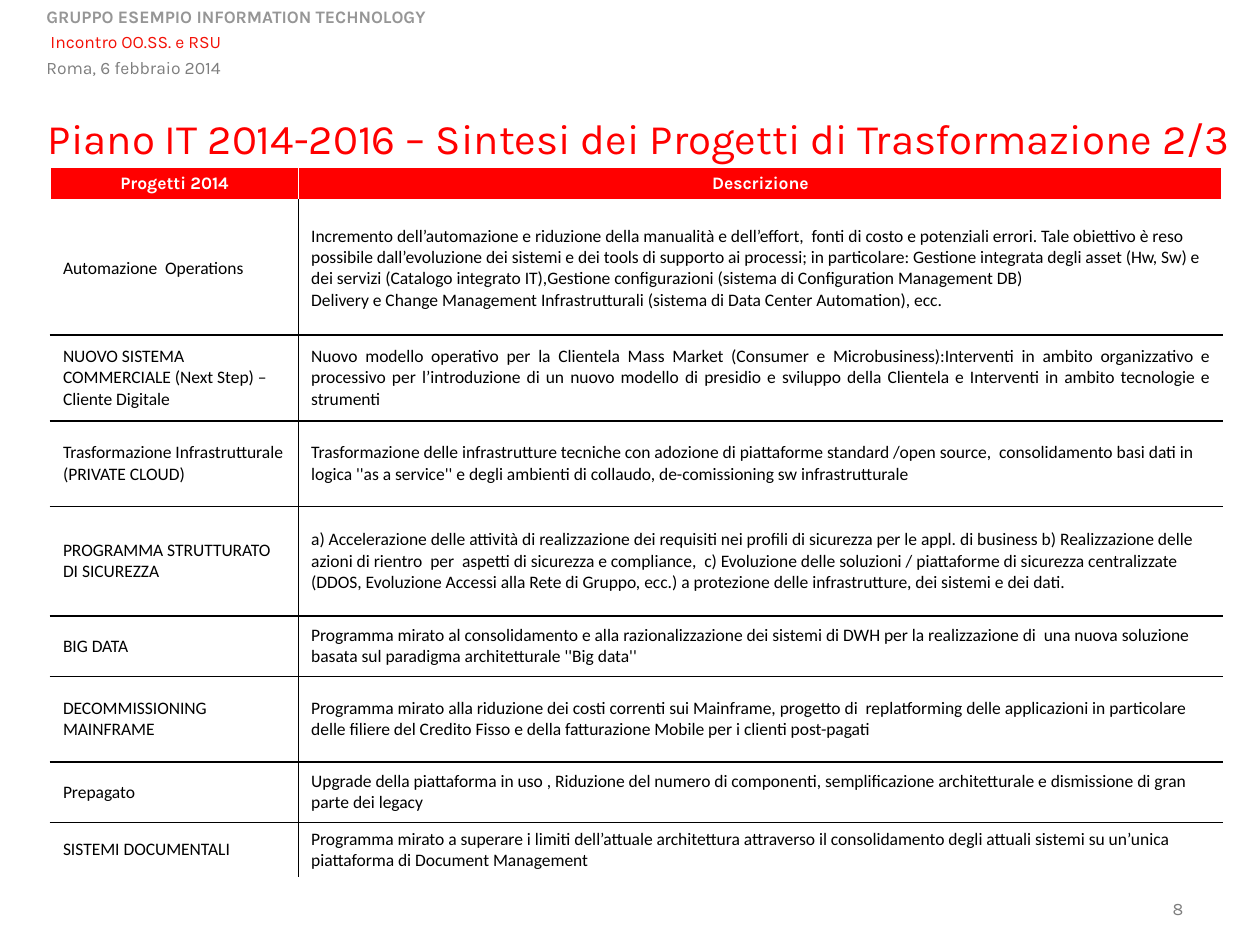
from pptx import Presentation, util as u
from pptx.dml.color import RGBColor
from pptx.enum import text
from pptx.oxml import parse_xml
from pptx.oxml.ns import nsdecls

RED, GREY, WHITE, BLACK = "FF0000", "7E7E7E", "FFFFFF", "000000"
ALIGN, ANCHOR = text.PP_ALIGN, text.MSO_ANCHOR


def color(code):
    return RGBColor.from_string(code)


class Deck:
    """Holds the style and the current slide."""
    head, body, size = "Karla", "Calibri", 10

    def __init__(self):
        self.prs = Presentation()
        self.prs.slide_width, self.prs.slide_height = u.Inches(10), u.Inches(7.5)
        self.slide = self.prs.slides.add_slide(self.prs.slide_layouts[5])

    def run(self, para, words, code, font=None, size=None, bold=False):
        run = para.add_run()
        run.text = words
        run.font.name = font or self.head
        run.font.size = u.Pt(size or self.size)
        run.font.bold = bold
        run.font.color.rgb = color(code)

    def title(self, words, *place):
        shape = self.slide.shapes.title
        shape.left, shape.top, shape.width, shape.height = map(u.Inches, place)
        frame = shape.text_frame
        frame.auto_size = text.MSO_AUTO_SIZE.NONE
        frame.vertical_anchor = ANCHOR.TOP
        para = frame.paragraphs[0]
        para.alignment, para.line_spacing = ALIGN.LEFT, 0.8
        self.run(para, words, RED, size=24)

    def box(self, *place, anchor=ANCHOR.TOP):
        frame = self.slide.shapes.add_textbox(*map(u.Inches, place)).text_frame
        frame.word_wrap = True
        frame.vertical_anchor = anchor
        return frame

    def edges(self, cell, **lines):
        for side, (code, width) in lines.items():
            cell._tc.get_or_add_tcPr().append(parse_xml(
                f'<a:ln{side} {nsdecls("a")} w="{u.Pt(width)}"><a:solidFill>'
                f'<a:srgbClr val="{code}"/></a:solidFill></a:ln{side}>'))

    def cell(self, cell, words, fill, code, font, align, bold=False):
        cell.fill.solid()
        cell.fill.fore_color.rgb = color(fill)
        frame = cell.text_frame
        for i, line in enumerate(words.split("\n")):
            para = frame.add_paragraph() if i else frame.paragraphs[0]
            para.alignment = align
            self.run(para, line, code, font, bold=bold)

    def table(self, left, top, cols, heads, rows):
        """Each row is height, project, description and its alignment."""
        tall = [0.27] + [row[0] for row in rows]
        grid = self.slide.shapes.add_table(
            len(tall), len(cols), *map(u.Inches, (left, top, sum(cols), sum(tall)))).table
        grid.horz_banding = False
        for col, width in zip(grid.columns, cols):
            col.width = u.Inches(width)
        for line, height in zip(grid.rows, tall):
            line.height = u.Inches(height)

        # Header row
        pale, dark = (WHITE, 1), (BLACK, 1)
        for c, words in enumerate(heads):
            cell = grid.cell(0, c)
            self.edges(cell, L=pale, R=pale, T=pale, B=(WHITE, 3))
            self.cell(cell, words, RED, WHITE, self.head, ALIGN.CENTER, True)

        # Body rows: dark lines only between cells
        for r, (_, name, about, align) in enumerate(rows, 1):
            over = pale if r == 1 else dark
            under = pale if r == len(rows) else dark
            for c, (words, side) in enumerate([(name, ALIGN.LEFT), (about, align)]):
                cell = grid.cell(r, c)
                cell.vertical_anchor = ANCHOR.MIDDLE
                self.edges(cell, L=dark if c else pale, R=pale if c else dark,
                           T=over, B=under)
                self.cell(cell, words, WHITE, BLACK, self.body, side)


ROWS = [
    (1.06, "Automazione  Operations",
     "Incremento dell’automazione e riduzione della manualità e dell’effort,  fonti di costo e "
     "potenziali errori. Tale obiettivo è reso possibile dall’evoluzione dei sistemi e dei tools di "
     "supporto ai processi; in particolare: Gestione integrata degli asset (Hw, Sw) e dei servizi "
     "(Catalogo integrato IT),Gestione configurazioni (sistema di Configuration Management DB)\n"
     "Delivery e Change Management Infrastrutturali (sistema di Data Center Automation), ecc.",
     ALIGN.LEFT),
    (0.68, "NUOVO SISTEMA COMMERCIALE (Next Step) – Cliente Digitale",
     "Nuovo modello operativo per la Clientela Mass Market (Consumer e Microbusiness):Interventi in "
     "ambito organizzativo e processivo per l’introduzione di un nuovo modello di presidio e sviluppo "
     "della Clientela e Interventi in ambito tecnologie e strumenti", ALIGN.JUSTIFY),
    (0.68, "Trasformazione Infrastrutturale (PRIVATE CLOUD)",
     "Trasformazione delle infrastrutture tecniche con adozione di piattaforme standard /open source,  "
     "consolidamento basi dati in logica ''as a service'' e degli ambienti di collaudo, "
     "de-comissioning sw infrastrutturale", ALIGN.LEFT),
    (0.87, "PROGRAMMA STRUTTURATO DI SICUREZZA",
     "a) Accelerazione delle attività di realizzazione dei requisiti nei profili di sicurezza per le "
     "appl. di business b) Realizzazione delle azioni di rientro  per  aspetti di sicurezza e "
     "compliance,  c) Evoluzione delle soluzioni / piattaforme di sicurezza centralizzate (DDOS, "
     "Evoluzione Accessi alla Rete di Gruppo, ecc.) a protezione delle infrastrutture, dei sistemi e "
     "dei dati.", ALIGN.LEFT),
    (0.48, "BIG DATA",
     "Programma mirato al consolidamento e alla razionalizzazione dei sistemi di DWH per la "
     "realizzazione di  una nuova soluzione basata sul paradigma architetturale ''Big data''",
     ALIGN.LEFT),
    (0.68, "DECOMMISSIONING MAINFRAME",
     "Programma mirato alla riduzione dei costi correnti sui Mainframe, progetto di  replatforming "
     "delle applicazioni in particolare delle filiere del Credito Fisso e della fatturazione Mobile "
     "per i clienti post-pagati", ALIGN.LEFT),
    (0.48, "Prepagato",
     "Upgrade della piattaforma in uso , Riduzione del numero di componenti, semplificazione "
     "architetturale e dismissione di gran parte dei legacy", ALIGN.LEFT),
    (0.43, "SISTEMI DOCUMENTALI",
     "Programma mirato a superare i limiti dell’attuale architettura attraverso il consolidamento "
     "degli attuali sistemi su un’unica piattaforma di Document Management", ALIGN.LEFT),
]


def main():
    deck = Deck()

    # Meeting details
    frame = deck.box(0.27, 0, 5, 0.67)
    deck.run(frame.paragraphs[0], "GRUPPO ESEMPIO INFORMATION TECHNOLOGY", "969696", bold=True)
    para = frame.add_paragraph()
    para.line_spacing = 1.2
    deck.run(para, " Incontro OO.SS. e RSU", "F31107")
    para.add_line_break()
    deck.run(para, "Roma, 6 febbraio 2014", GREY)

    # Title
    deck.title("Piano IT 2014-2016 – Sintesi dei Progetti di Trasformazione 2/3",
               0.28, 0.92, 9.61, 0.41)

    # Page number
    para = deck.box(8.39, 6.98, 1.1, 0.36, anchor=ANCHOR.BOTTOM).paragraphs[0]
    para.alignment = ALIGN.RIGHT
    deck.run(para, "8", GREY)

    # Projects
    deck.table(0.4, 1.33, (1.97, 7.33), ("Progetti 2014", "Descrizione"), ROWS)

    deck.prs.save("out.pptx")


if __name__ == "__main__":
    main()
